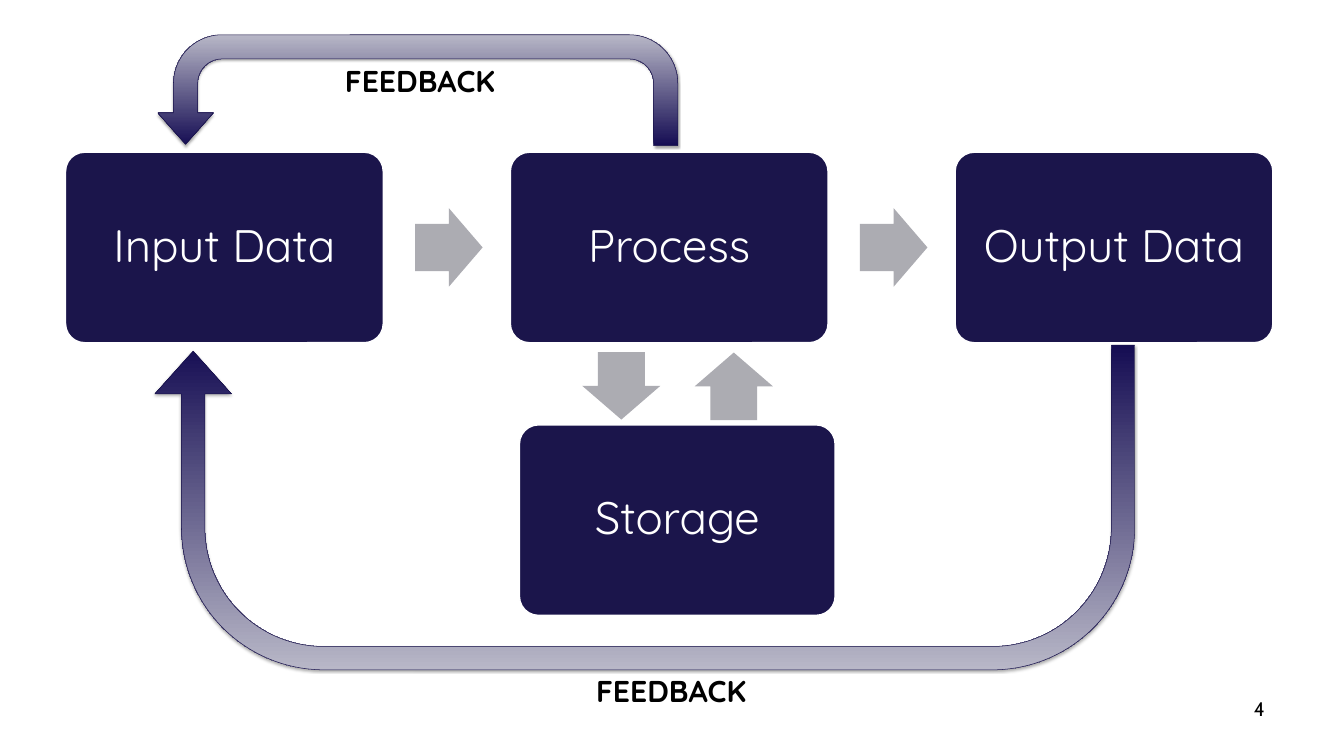
"""Build the data processing cycle slide with its feedback loops."""
from dataclasses import dataclass

from lxml import etree
from pptx import Presentation
from pptx import util as u
from pptx.dml.color import RGBColor
from pptx.enum import shapes, text
from pptx.oxml.ns import qn

PX = 9144
NAVY = RGBColor(0x1B, 0x15, 0x4B)
GREY = RGBColor(0xAC, 0xAC, 0xB2)
WHITE = RGBColor(0xFF, 0xFF, 0xFF)
BLACK = RGBColor(0x00, 0x00, 0x00)
LOOP_DARK = RGBColor(0x15, 0x0D, 0x53)
LOOP_LIGHT = RGBColor(0xB8, 0xB7, 0xC7)
LOOP_LINE = RGBColor(0x19, 0x13, 0x4B)
HEAD_FONT = "Quicksand"
BODY_FONT = "Cabin"
STAGE_LEFT, STAGE_TOP, STAGE_STEP = 130, 302, 882


@dataclass(frozen=True)
class Box:
    """Position and size in px."""
    left: int
    top: int
    width: int
    height: int

    def emu(self) -> list[u.Emu]:
        """Return the four lengths in EMU."""
        return [u.Emu(v * PX) for v in (self.left, self.top, self.width, self.height)]


@dataclass(frozen=True)
class Stage:
    """Rounded box naming one stage."""
    name: str
    box: Box


@dataclass(frozen=True)
class Arrow:
    """Grey block arrow between stages."""
    box: Box
    rotation: int = 0


@dataclass(frozen=True)
class Loop:
    """U-turn feedback arrow."""
    box: Box
    adjustments: tuple[float, ...]
    rotation: int = 0
    flipped: bool = False


@dataclass(frozen=True)
class Label:
    """Free-standing line of text."""
    words: str
    box: Box
    size: int
    font: str
    bold: bool = False
    align: text.PP_ALIGN = text.PP_ALIGN.LEFT
    anchor: text.MSO_ANCHOR = text.MSO_ANCHOR.TOP
    inset: tuple[int, int] = (10, 5)
    wrap: bool = True


STAGES = [
    Stage(name, Box(STAGE_LEFT + i * STAGE_STEP, STAGE_TOP, 630, 378))
    for i, name in enumerate(("Input Data", "Process", "Output Data"))
] + [Stage("Storage", Box(1030, 843, 626, 378))]

ARROWS = [Arrow(Box(823 + i * STAGE_STEP, 413, 134, 156)) for i in range(2)] + [
    Arrow(Box(1165, 688, 134, 155), 90),
    Arrow(Box(1388, 689, 134, 155), 270),
]

LOOPS = [
    Loop(Box(307, 685, 1943, 644), (0.072, 0.118, 0.132, 0.438, 0.982), rotation=180),
    Loop(Box(313, 69, 1031, 220), (0.218, 0.25, 0.284, 0.438, 0.989), flipped=True),
]

LABELS = [
    Label("FEEDBACK", Box(1172, 1329, 321, 82), 43, HEAD_FONT, bold=True, wrap=False),
    Label("FEEDBACK", Box(674, 119, 323, 82), 43, HEAD_FONT, bold=True),
    Label("4", Box(1910, 1366, 622, 80), 28, BODY_FONT, align=text.PP_ALIGN.RIGHT,
          anchor=text.MSO_ANCHOR.MIDDLE, inset=(24, 12)),
]


def set_insets(tf, x: int, y: int) -> None:
    """Set the inner margins of a text frame in px."""
    tf.margin_left = tf.margin_right = u.Emu(x * PX)
    tf.margin_top = tf.margin_bottom = u.Emu(y * PX)


def add_run(p, words: str, size: int, font: str, color: RGBColor, bold: bool = False) -> None:
    """Append one formatted run to a paragraph."""
    r = p.add_run()
    r.text = words
    r.font.size = u.Pt(size)
    r.font.name = font
    r.font.bold = bold
    r.font.color.rgb = color


def add_stage(slide, stage: Stage) -> None:
    """Draw a stage box with its centred name."""
    sp = slide.shapes.add_shape(shapes.MSO_SHAPE.ROUNDED_RECTANGLE, *stage.box.emu())
    sp.shadow.inherit = False
    sp.adjustments[0] = 0.1
    sp.fill.solid()
    sp.fill.fore_color.rgb = NAVY
    sp.line.color.rgb = WHITE
    sp.line.width = u.Pt(2)
    tf = sp.text_frame
    tf.word_wrap = True
    tf.vertical_anchor = text.MSO_ANCHOR.MIDDLE
    set_insets(tf, 27, 27)
    p = tf.paragraphs[0]
    p.alignment = text.PP_ALIGN.CENTER
    p.line_spacing = 0.9
    add_run(p, stage.name, 65, HEAD_FONT, WHITE)


def add_arrow(slide, arrow: Arrow) -> None:
    """Draw a grey block arrow."""
    sp = slide.shapes.add_shape(shapes.MSO_SHAPE.RIGHT_ARROW, *arrow.box.emu())
    sp.shadow.inherit = False
    sp.adjustments[0] = 0.6
    sp.adjustments[1] = 0.5
    sp.rotation = arrow.rotation
    sp.fill.solid()
    sp.fill.fore_color.rgb = GREY
    sp.line.fill.background()


def add_shadow(sp) -> None:
    """Give a shape a soft shadow below it."""
    effects = etree.SubElement(sp._element.spPr, qn("a:effectLst"))
    shadow = etree.SubElement(
        effects, qn("a:outerShdw"), blurRad=str(u.Pt(3.1)), dist=str(u.Pt(1.8)),
        dir="5400000", rotWithShape="0")
    color = etree.SubElement(shadow, qn("a:srgbClr"), val=str(BLACK))
    etree.SubElement(color, qn("a:alpha"), val="35000")


def add_loop(slide, loop: Loop) -> None:
    """Draw a feedback arrow that fades away from its ends."""
    sp = slide.shapes.add_shape(shapes.MSO_SHAPE.U_TURN_ARROW, *loop.box.emu())
    for i, value in enumerate(loop.adjustments):
        sp.adjustments[i] = value
    sp.rotation = loop.rotation
    if loop.flipped:
        sp._element.spPr.xfrm.set("flipH", "1")
    sp.fill.gradient()
    sp.fill.gradient_angle = 90
    for stop, color in zip(sp.fill.gradient_stops, (LOOP_DARK, LOOP_LIGHT)):
        stop.color.rgb = color
    sp.line.color.rgb = LOOP_LINE
    sp.line.width = u.Pt(0.75)
    add_shadow(sp)


def add_label(slide, label: Label) -> None:
    """Write a free-standing label."""
    tf = slide.shapes.add_textbox(*label.box.emu()).text_frame
    tf.word_wrap = label.wrap
    tf.vertical_anchor = label.anchor
    set_insets(tf, *label.inset)
    p = tf.paragraphs[0]
    p.alignment = label.align
    add_run(p, label.words, label.size, label.font, BLACK, label.bold)


def main() -> None:
    """Build and save the slide."""
    prs = Presentation()
    prs.slide_width, prs.slide_height = u.Emu(2665 * PX), u.Emu(1500 * PX)
    slide = prs.slides.add_slide(prs.slide_layouts[6])
    for items, draw in ((STAGES, add_stage), (ARROWS, add_arrow),
                        (LOOPS, add_loop), (LABELS, add_label)):
        for item in items:
            draw(slide, item)
    prs.save("out.pptx")


if __name__ == "__main__":
    main()
